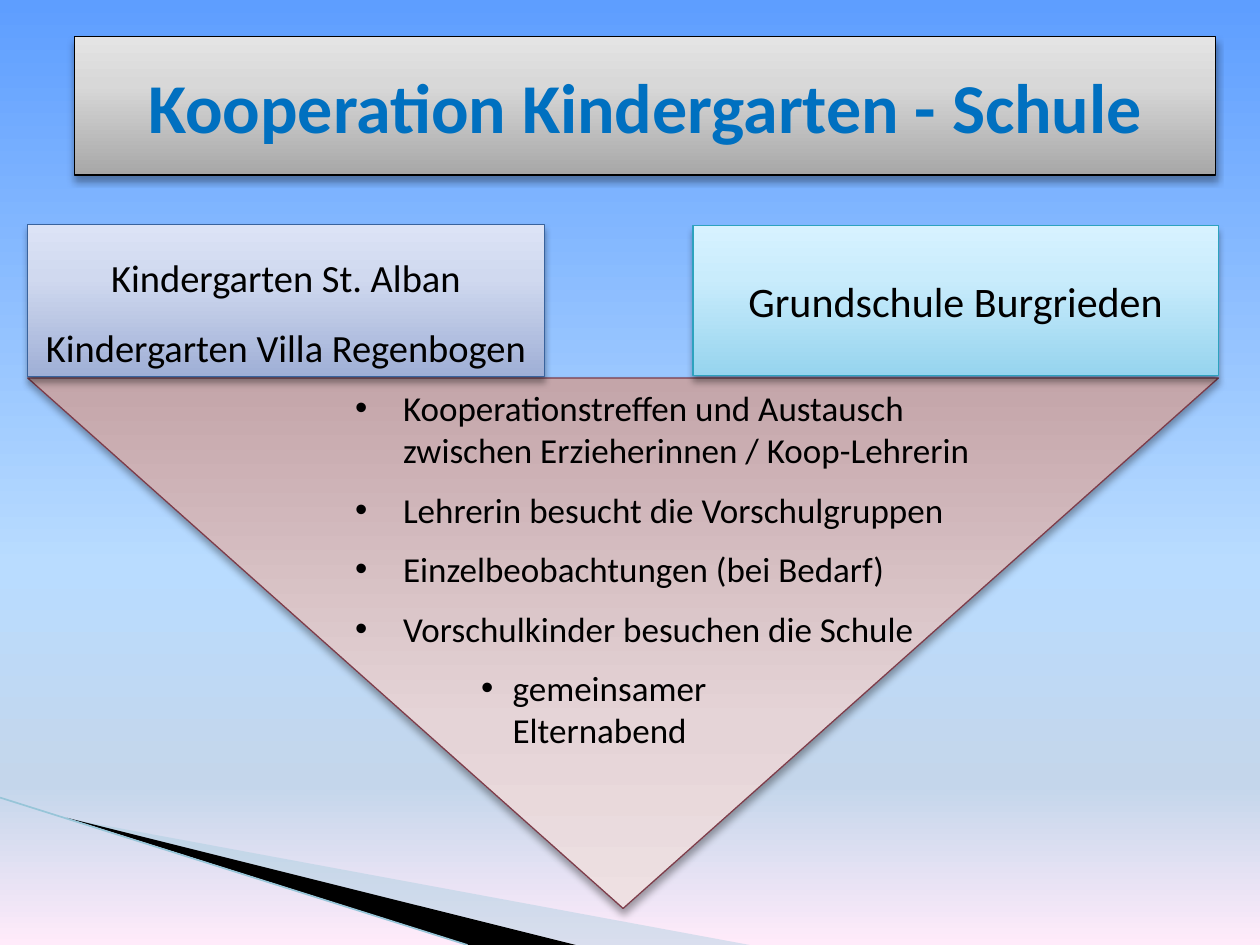
from dataclasses import dataclass

from lxml.etree import SubElement
from pptx import Presentation
from pptx.dml.color import RGBColor
from pptx.enum.shapes import MSO_CONNECTOR, MSO_SHAPE
from pptx.enum.text import MSO_ANCHOR, PP_ALIGN
from pptx.oxml.ns import qn
from pptx.util import Inches, Pt


@dataclass(frozen=True)
class Theme:
    font: str = "Calibri"
    ink: str = "000000"
    title: str = "0070C0"
    sky: tuple = ((0, "5E9EFF"), (60, "B9DCFF"), (83, "C4D6EB"), (100, "FFEBFA"))
    gray: tuple = ((0, "A7A7A7"), (65, "D8D8D8"), (100, "E4E4E4"))
    blue: tuple = ((0, "9FAFD6"), (65, "D0D9EF"), (100, "DCE3F6"))
    cyan: tuple = ((0, "96D4EE"), (65, "C9ECFC"), (100, "D7F2FF"))
    rose: tuple = ((0, "C4A5A9"), (65, "E5D4D7"), (100, "EEE0E2"))
    blue_edge: str = "39639D"
    cyan_edge: str = "2DA2BF"
    rose_edge: str = "7D3C4A"
    wave: str = "A0CBDC"
    wave_edge: str = "97C5D8"
    head: int = 40
    school: int = 24
    nursery: int = 22
    body: int = 20


def rgb(code):
    return RGBColor.from_string(code)


def cell(n):
    return Inches(n / 10)


class Painter:
    def __init__(self, slide, theme):
        self.slide = slide
        self.theme = theme

    def shade(self, fill, root, stops, angle):
        fill.gradient()
        fill.gradient_angle = angle
        ramp = root.find(".//" + qn("a:gsLst"))
        for old in list(ramp):
            ramp.remove(old)
        for share, code in stops:
            stop = SubElement(ramp, qn("a:gs"), pos=str(share * 1000))
            SubElement(stop, qn("a:srgbClr"), val=code)

    def sky(self):
        self.shade(self.slide.background.fill, self.slide._element, self.theme.sky, 270)

    def wedge(self, points, code, alpha=100):
        pen = self.slide.shapes.build_freeform(*map(cell, points[0]))
        pen.add_line_segments([tuple(map(cell, p)) for p in points[1:]])
        shape = pen.convert_to_shape()
        shape.shadow.inherit = False
        shape.fill.solid()
        shape.fill.fore_color.rgb = rgb(code)
        shape.line.fill.background()
        color = shape._element.spPr.find(".//" + qn("a:srgbClr"))
        SubElement(color, qn("a:alpha"), val=str(alpha * 1000))

    def rule(self, start, end, code, width):
        line = self.slide.shapes.add_connector(
            MSO_CONNECTOR.STRAIGHT, *map(cell, start + end))
        line.line.color.rgb = rgb(code)
        line.line.width = Pt(width)
        SubElement(line._element.spPr, qn("a:effectLst"))

    def panel(self, kind, box, stops, edge):
        shape = self.slide.shapes.add_shape(kind, *map(cell, box))
        shape.shadow.inherit = False
        self.shade(shape.fill, shape._element, stops, 90)
        shape.line.color.rgb = rgb(edge)
        shape.line.width = Pt(0.75)
        glow = SubElement(
            shape._element.spPr.find(qn("a:effectLst")), qn("a:outerShdw"),
            blurRad=str(Pt(4)), dist=str(Pt(3)), dir="5400000", rotWithShape="0")
        color = SubElement(glow, qn("a:srgbClr"), val=self.theme.ink)
        SubElement(color, qn("a:alpha"), val="35000")
        return shape

    def style(self, para, size, code, bold=False):
        for run in para.runs:
            font = run.font
            font.name, font.size, font.bold = self.theme.font, Pt(size), bold
            font.color.rgb = rgb(code)

    def label(self, shape, text, size, code, bold=False, pitch=1.0):
        frame = shape.text_frame
        frame.word_wrap = True
        frame.vertical_anchor = MSO_ANCHOR.MIDDLE
        frame.text = text
        para = frame.paragraphs[0]
        para.alignment = PP_ALIGN.CENTER
        para.line_spacing = pitch
        self.style(para, size, code, bold)

    def bullets(self, box, items):
        frame = self.slide.shapes.add_textbox(*map(cell, box)).text_frame
        frame.word_wrap = True
        for i, (text, level, left, hang) in enumerate(items):
            para = frame.add_paragraph() if i else frame.paragraphs[0]
            para.text = text
            para.level = level
            props = para._p.get_or_add_pPr()
            props.set("marL", str(Inches(left)))
            props.set("indent", str(-Inches(hang)))
            SubElement(props, qn("a:buFont"), typeface="Arial")
            SubElement(props, qn("a:buChar"), char="•")
            para.space_before = Pt(10 if i else 0)
            self.style(para, self.theme.body, self.theme.ink)


def main():
    deck = Presentation()
    deck.slide_width, deck.slide_height = cell(100), cell(75)
    look = Theme()
    art = Painter(deck.slides.add_slide(deck.slide_layouts[6]), look)

    art.sky()
    art.wedge([(5.5, 65), (59.5, 75), (45.6, 75)], look.wave, 40)
    art.wedge([(5.3, 64.9), (45.7, 75), (37.2, 75)], look.ink)
    art.rule((0, 63.3), (37.1, 75), look.wave_edge, 0.95)

    funnel = art.panel(MSO_SHAPE.ISOSCELES_TRIANGLE, (2.2, 30, 94.5, 42.1),
                       look.rose, look.rose_edge)
    funnel.rotation = 180
    funnel.adjustments[0] = 0.5

    nursery = art.panel(MSO_SHAPE.RECTANGLE, (2.2, 17.8, 41, 12.1),
                        look.blue, look.blue_edge)
    art.label(nursery, "Kindergarten St. Alban\vKindergarten Villa Regenbogen",
              look.nursery, look.ink, pitch=1.5)
    school = art.panel(MSO_SHAPE.RECTANGLE, (55, 17.9, 41.7, 11.9),
                       look.cyan, look.cyan_edge)
    art.label(school, "Grundschule Burgrieden", look.school, look.ink)

    steps = [
        "Kooperationstreffen und Austausch\vzwischen Erzieherinnen / Koop-Lehrerin",
        "Lehrerin besucht die Vorschulgruppen",
        "Einzelbeobachtungen (bei Bedarf)",
        "Vorschulkinder besuchen die Schule",
    ]
    items = [(step, 0, 0.38, 0.38) for step in steps]
    items.append(("gemeinsamer\vElternabend", 1, 1.25, 0.25))
    art.bullets((27.2, 30.2, 59.1, 31.3), items)

    title = art.panel(MSO_SHAPE.RECTANGLE, (5.9, 2.9, 90.6, 11), look.gray, look.ink)
    art.label(title, "Kooperation Kindergarten - Schule", look.head, look.title, bold=True)

    deck.save("out.pptx")


if __name__ == "__main__":
    main()
